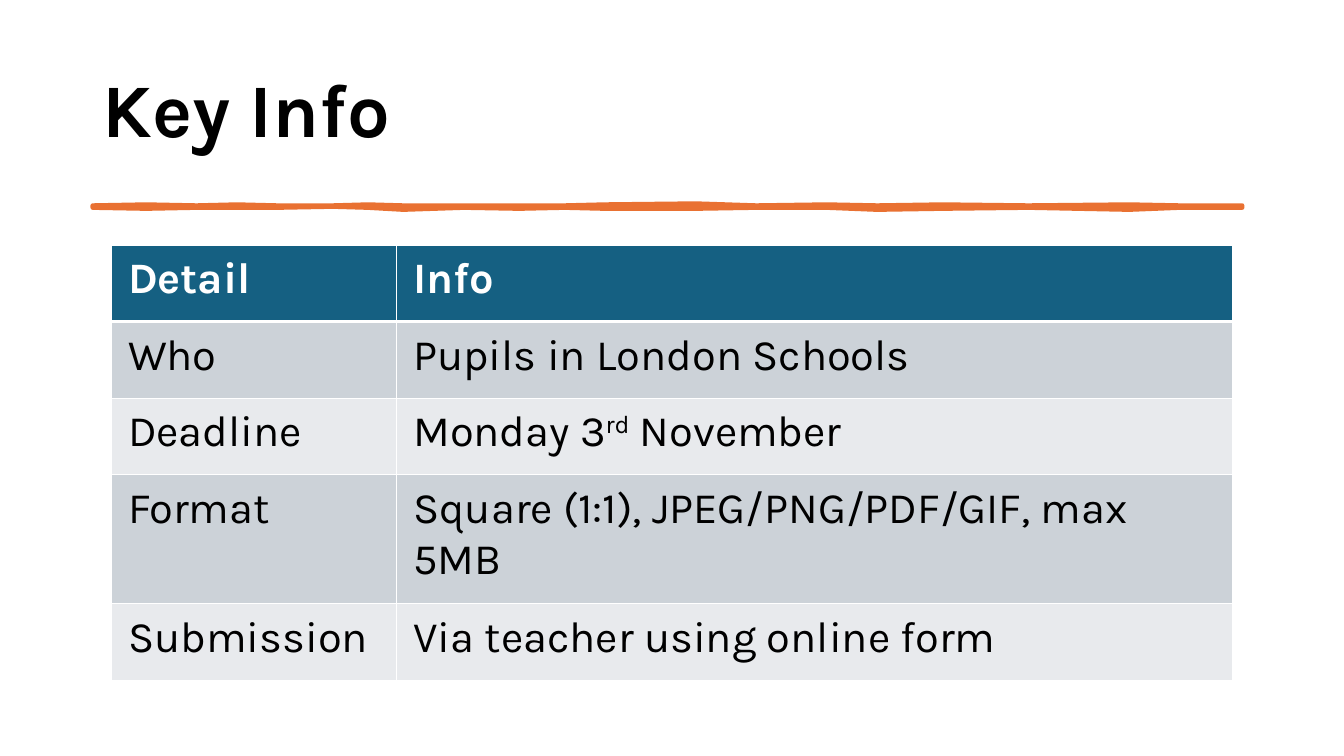
"""Build the Key Info slide: title, hand-drawn rule and details table."""
from dataclasses import dataclass

from lxml.etree import SubElement
from pptx import Presentation
from pptx.dml.color import RGBColor as RGB
from pptx.enum.text import MSO_ANCHOR as Anchor
from pptx.oxml.ns import qn
from pptx.util import Inches, Pt


@dataclass(frozen=True)
class Theme:
    font: str = "Karla"
    title_size: int = 54
    table_size: int = 31
    ink: str = "000000"
    paper: str = "FFFFFF"
    accent: str = "E97132"
    header: str = "156082"
    bands: tuple = ("CCD2D8", "E8EAED")


theme = Theme()


def style(paragraph, size, color, bold):
    font = paragraph.font
    font.name, font.size, font.bold = theme.font, Pt(size), bold
    font.color.rgb = RGB.from_string(color)


def add_border(cell, side, width):
    border = SubElement(cell._tc.get_or_add_tcPr(), qn(f"a:{side}"), w=str(Pt(width)))
    fill = SubElement(border, qn("a:solidFill"))
    SubElement(fill, qn("a:srgbClr"), val=theme.paper)


deck = Presentation()
deck.slide_width, deck.slide_height = Inches(13.33), Inches(7.5)
slide = deck.slides.add_slide(deck.slide_layouts[6])

title = slide.shapes.add_textbox(Inches(0.92), Inches(0.4), Inches(11.5), Inches(1.45)).text_frame
title.word_wrap = True
title.vertical_anchor = Anchor.MIDDLE
heading = title.paragraphs[0]
heading.text = "Key Info"
heading.line_spacing = 0.9
style(heading, theme.title_size, theme.ink, True)

rule_stations = [
    (0.92, 2.04, 2.06), (1.45, 2.03, 2.07), (1.95, 2.04, 2.06), (2.35, 2.03, 2.06),
    (2.75, 2.04, 2.06), (3.3, 2.04, 2.05), (3.65, 2.03, 2.06), (4.0, 2.04, 2.08),
    (4.6, 2.04, 2.06), (5.15, 2.04, 2.07), (5.6, 2.04, 2.06), (6.0, 2.03, 2.07),
    (6.9, 2.02, 2.07), (7.5, 2.04, 2.06), (8.2, 2.03, 2.06), (8.7, 2.04, 2.08),
    (9.35, 2.03, 2.07), (10.2, 2.04, 2.06), (11.2, 2.03, 2.08), (11.7, 2.04, 2.06),
    (12.32, 2.04, 2.06),
]
upper = [(Inches(x), Inches(top)) for x, top, _ in rule_stations]
lower = [(Inches(x), Inches(bottom)) for x, _, bottom in rule_stations]
builder = slide.shapes.build_freeform(*upper[0])
builder.add_line_segments(upper[1:] + lower[::-1], close=True)
rule = builder.convert_to_shape()
rule.shadow.inherit = False
rule.fill.solid()
rule.fill.fore_color.rgb = rule.line.color.rgb = RGB.from_string(theme.accent)
rule.line.width = Pt(3.25)
SubElement(rule.line._get_or_add_ln(), qn("a:round"))

details = [
    ("Detail", ["Info"]),
    ("Who", ["Pupils in London Schools"]),
    ("Deadline", ["Monday 3", "rd", " November"]),
    ("Format", ["Square (1:1), JPEG/PNG/PDF/GIF, max 5MB"]),
    ("Submission", ["Via teacher using online form"]),
]
row_heights = [0.76, 0.76, 0.76, 1.28, 0.76]
column_widths = [2.83, 8.3]
table = slide.shapes.add_table(
    len(details), len(column_widths),
    Inches(1.1), Inches(2.43), Inches(sum(column_widths)), Inches(sum(row_heights)),
).table
for column, width in zip(table.columns, column_widths):
    column.width = Inches(width)

for row, (label, info) in enumerate(details):
    table.rows[row].height = Inches(row_heights[row])
    is_header = row == 0
    for col, pieces in enumerate(([label], info)):
        cell = table.cell(row, col)
        cell.margin_left = cell.margin_right = Inches(0.17)
        cell.margin_top = cell.margin_bottom = Inches(0.09)
        add_border(cell, "lnL", 1)
        add_border(cell, "lnR", 1)
        add_border(cell, "lnT", 3 if row == 1 else 1)
        add_border(cell, "lnB", 3 if is_header else 1)
        cell.fill.solid()
        cell.fill.fore_color.rgb = RGB.from_string(
            theme.header if is_header else theme.bands[(row - 1) % 2]
        )
        paragraph = cell.text_frame.paragraphs[0]
        style(paragraph, theme.table_size, theme.paper if is_header else theme.ink, is_header)
        for piece in pieces:
            run = paragraph.add_run()
            run.text = piece
            if piece == "rd":
                run._r.get_or_add_rPr().set("baseline", "30000")

deck.save("out.pptx")
